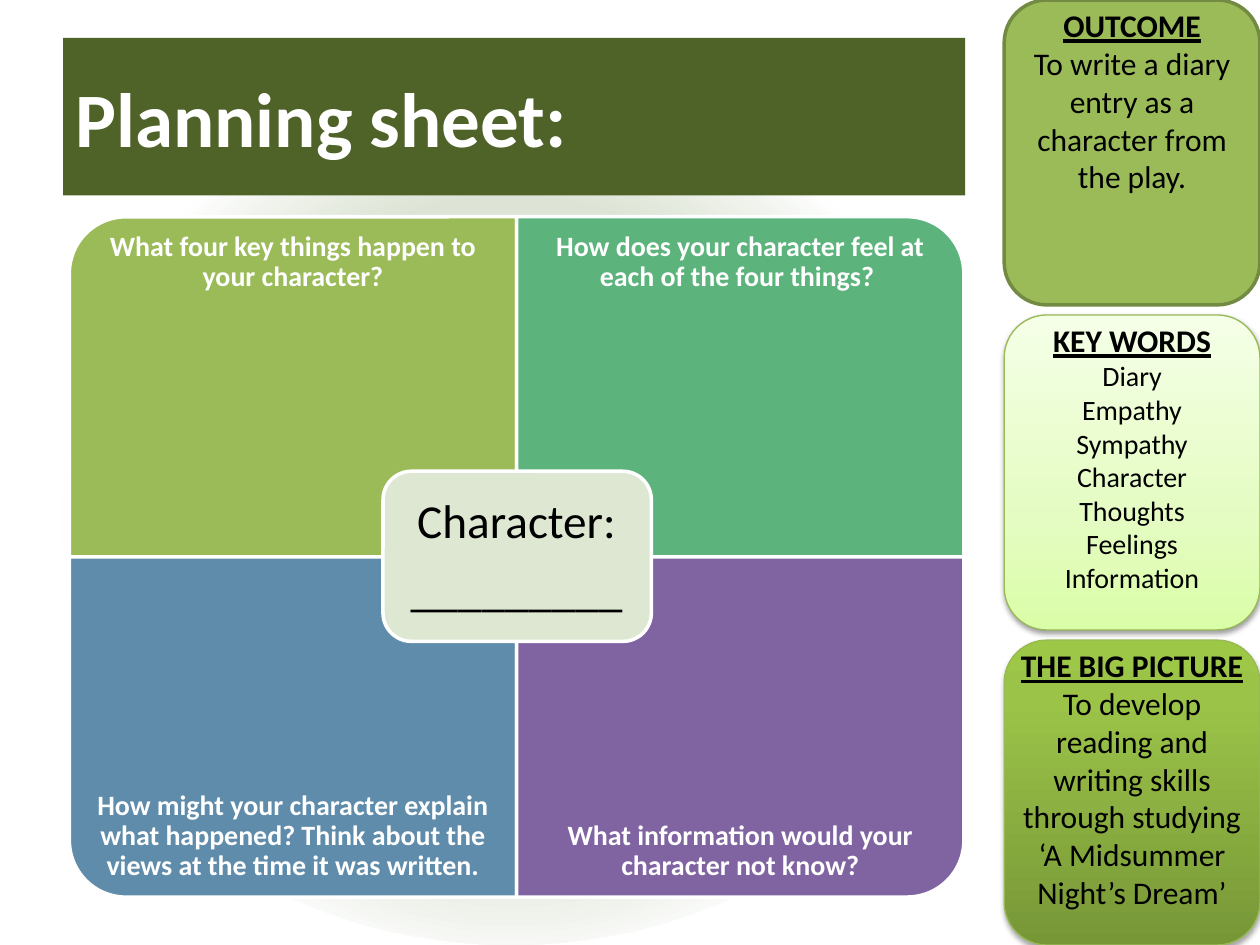
"""Build a planning sheet slide with four prompts and a sidebar."""
from lxml import etree
from pptx import Presentation
from pptx import util as u
from pptx.dml.color import RGBColor
from pptx.enum import shapes, text
from pptx.oxml.ns import nsdecls, qn

COLOURS = {
    "title": "4F6228", "white": "FFFFFF", "black": "000000", "glow": "DDE4D5",
    "lime": "9BBB59", "green": "5CB37C", "blue": "608CAB", "purple": "8064A2",
    "centre": "DEE7D1", "outcome_line": "738A42", "card_line": "98B955",
}
PALE = [(0, "DAFDA7"), (35, "E4FCC2"), (100, "F5FFE7")]
DEEP = [(0, "779737"), (80, "9BC348"), (100, "9DC746")]
GLOW = [(0, COLOURS["glow"]), (50, COLOURS["glow"]), (71, COLOURS["white"]),
        (100, COLOURS["white"])]
UPWARD = '<a:lin ang="16200000" scaled="0"/>'
RADIAL = ('<a:path path="circle"><a:fillToRect l="50000" t="50000" '
          'r="50000" b="50000"/></a:path>')
FONT = "Calibri"
GRID_LEFT, GRID_TOP, CELL_WIDTH, CELL_HEIGHT = 0.55, 1.72, 3.55, 2.7
PROMPT_HEIGHT = 2.02
CARD_LEFT, CARD_WIDTH = 7.97, 2.03

QUADRANTS = [
    ("What four key things happen to your character?", "lime", 270),
    ("How does your character feel at each of the four things? ", "green", 0),
    ("How might your character explain what happened? Think about the views "
     "at the time it was written.", "blue", 180),
    ("What information would your character not know?", "purple", 90),
]
CARDS = [
    (0, 2.42, 1.62, None, None, "OUTCOME", 18,
     ["To write a diary entry as a character from the play."]),
    (2.5, 2.5, 2.29, PALE, (38, 1.6), "KEY WORDS", 16,
     ["Diary", "Empathy", "Sympathy", "Character", "Thoughts", "Feelings",
      "Information"]),
    (5.08, 2.42, 2.22, DEEP, (35, 1.8), "THE BIG PICTURE", 18,
     ["To develop reading and writing skills through studying "
      "‘A Midsummer Night’s Dream’"]),
]


def rgb(name):
    """Return the named colour."""
    return RGBColor.from_string(COLOURS[name])


def add_panel(slide, kind, box, fill=None, line=None, width=2):
    """Add a preset shape with a plain fill and outline."""
    shape = slide.shapes.add_shape(kind, *map(u.Inches, box))
    shape.shadow.inherit = False
    if fill:
        shape.fill.solid()
        shape.fill.fore_color.rgb = rgb(fill)
    if line:
        shape.line.color.rgb = rgb(line)
        shape.line.width = u.Pt(width)
    else:
        shape.line.fill.background()
    return shape


def set_gradient(shape, stops, direction):
    """Fill a shape with a gradient of several stops."""
    shape.fill.background()
    marks = "".join(f'<a:gs pos="{place * 1000}"><a:srgbClr val="{colour}"/></a:gs>'
                    for place, colour in stops)
    gradient = etree.fromstring(
        f'<a:gradFill {nsdecls("a")} rotWithShape="1"><a:gsLst>{marks}</a:gsLst>'
        f'{direction}</a:gradFill>')
    properties = shape._element.spPr
    properties.replace(properties.find(qn("a:noFill")), gradient)


def set_shadow(shape, opacity, distance):
    """Give a shape a soft shadow below it."""
    effects = shape._element.spPr.find(qn("a:effectLst"))
    effects.append(etree.fromstring(
        f'<a:outerShdw {nsdecls("a")} blurRad="{u.Pt(3.1)}" dist="{u.Pt(distance)}" '
        f'dir="5400000" rotWithShape="0"><a:srgbClr val="{COLOURS["black"]}">'
        f'<a:alpha val="{opacity * 1000}"/></a:srgbClr></a:outerShdw>'))


def add_run(paragraph, words, size, colour, bold=False, underline=False):
    """Add one formatted run."""
    run = paragraph.add_run()
    run.text = words
    font = run.font
    font.name, font.size, font.bold, font.underline = FONT, u.Pt(size), bold, underline
    font.color.rgb = rgb(colour)


def add_text(slide, box, lines, anchor=text.MSO_ANCHOR.TOP, inset=None, tight=False):
    """Add a centred text box from lines of run settings."""
    frame = slide.shapes.add_textbox(*map(u.Inches, box)).text_frame
    frame.word_wrap = True
    frame.vertical_anchor = anchor
    if inset:
        frame.margin_left = frame.margin_right = u.Inches(inset)
        frame.margin_top = frame.margin_bottom = u.Inches(inset)
    for index, line in enumerate(lines):
        paragraph = frame.add_paragraph() if index else frame.paragraphs[0]
        paragraph.alignment = text.PP_ALIGN.CENTER
        if tight:
            paragraph.line_spacing = 0.9
            paragraph.space_after = u.Pt(line[1] * 0.35)
        add_run(paragraph, *line)
    return frame


def add_title(slide):
    """Place and format the title banner."""
    title = slide.shapes.title
    title.left, title.top, title.width, title.height = map(
        u.Inches, (0.5, 0.3, 7.16, 1.25))
    title.fill.solid()
    title.fill.fore_color.rgb = rgb("title")
    title.text_frame.vertical_anchor = text.MSO_ANCHOR.MIDDLE
    paragraph = title.text_frame.paragraphs[0]
    paragraph.alignment = text.PP_ALIGN.LEFT
    add_run(paragraph, "Planning sheet:", 44, "white", True)


def add_glow(slide):
    """Put the pale ellipse behind everything else."""
    glow = add_panel(slide, shapes.MSO_SHAPE.OVAL, (0.23, 0.78, 7.66, 6.72))
    set_gradient(glow, GLOW, RADIAL)
    slide.shapes._spTree.insert(2, glow._element)


def add_quadrant(slide, index, prompt, colour, rotation):
    """Add one quarter with its outer corner rounded, and its prompt."""
    row, column = divmod(index, 2)
    left = GRID_LEFT + column * CELL_WIDTH
    top = GRID_TOP + row * CELL_HEIGHT
    width, height = CELL_WIDTH, CELL_HEIGHT
    if rotation % 180:
        width, height = height, width
    box = (left + (CELL_WIDTH - width) / 2, top + (CELL_HEIGHT - height) / 2,
           width, height)
    panel = add_panel(slide, shapes.MSO_SHAPE.ROUND_1_RECTANGLE, box, colour, "white")
    panel.rotation = rotation
    text_top = top + row * (CELL_HEIGHT - PROMPT_HEIGHT)
    anchor = text.MSO_ANCHOR.BOTTOM if row else text.MSO_ANCHOR.TOP
    add_text(slide, (left, text_top, CELL_WIDTH, PROMPT_HEIGHT),
             [(prompt, 16, "white", True)], anchor, 0.12, True)


def add_centre(slide):
    """Add the character label in the middle of the quarters."""
    add_panel(slide, shapes.MSO_SHAPE.ROUNDED_RECTANGLE, (3.04, 3.74, 2.13, 1.35),
              "centre", "white")
    add_text(slide, (3.1, 3.81, 2, 1.22),
             [("Character:", 27, "black"), ("_________", 27, "black")],
             text.MSO_ANCHOR.MIDDLE, 0.11, True)


def add_card(slide, top, height, text_height, stops, shadow, heading, size, lines):
    """Add one sidebar card with an underlined heading."""
    box = (CARD_LEFT, top, CARD_WIDTH, height)
    kind = shapes.MSO_SHAPE.ROUNDED_RECTANGLE
    if stops:
        card = add_panel(slide, kind, box, line="card_line", width=0.75)
        set_gradient(card, stops, UPWARD)
        set_shadow(card, *shadow)
    else:
        add_panel(slide, kind, box, "lime", "outcome_line")
    frame = add_text(slide, (CARD_LEFT, top, CARD_WIDTH, text_height),
                     [(heading, 18, "black", True, True)]
                     + [(line, size, "black") for line in lines])
    frame.auto_size = text.MSO_AUTO_SIZE.SHAPE_TO_FIT_TEXT


def main():
    """Build and save the presentation."""
    presentation = Presentation()
    presentation.slide_width, presentation.slide_height = u.Inches(10), u.Inches(7.5)
    slide = presentation.slides.add_slide(presentation.slide_layouts[5])
    add_title(slide)
    add_glow(slide)
    for index, quadrant in enumerate(QUADRANTS):
        add_quadrant(slide, index, *quadrant)
    add_centre(slide)
    for card in CARDS:
        add_card(slide, *card)
    presentation.save("out.pptx")


if __name__ == "__main__":
    main()
